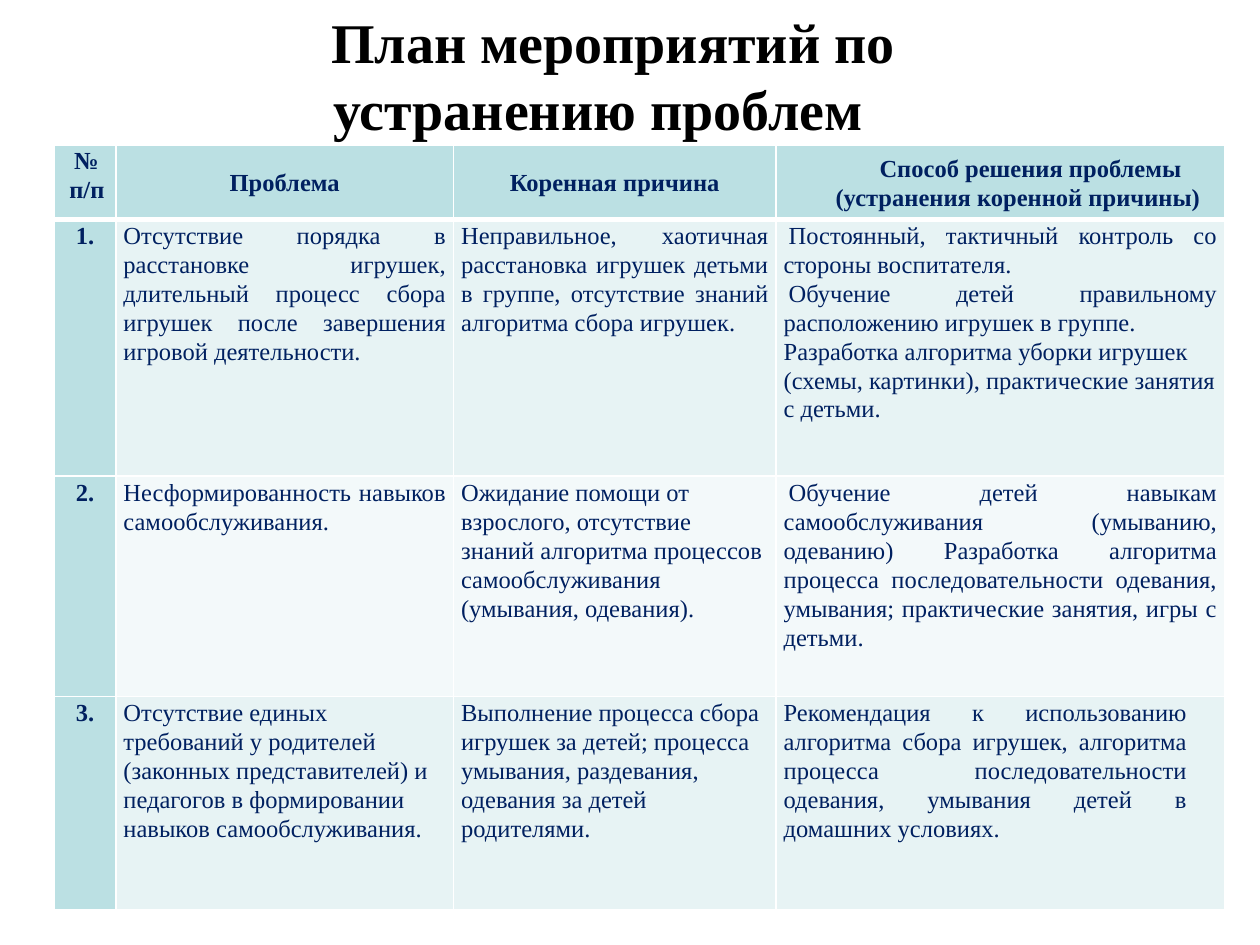
from lxml import etree
from pptx import Presentation
from pptx.dml.color import RGBColor
from pptx.enum.text import MSO_ANCHOR, PP_ALIGN
from pptx.oxml.ns import qn
from pptx.util import Inches, Pt

LEFT, CENTER, JUSTIFY = PP_ALIGN.LEFT, PP_ALIGN.CENTER, PP_ALIGN.JUSTIFY
TOP, MIDDLE = MSO_ANCHOR.TOP, MSO_ANCHOR.MIDDLE

THEME = dict(font="Times New Roman", title_lead="TeX Gyre Adventor",
             title="000000", text="002060", head="BBE0E3",
             bands=("E7F3F4", "F3F9FA"), border="FFFFFF",
             title_size=32, text_size=14)

# Content: each cell is a list of (text, paragraph format)
TITLE = "План мероприятий по\vустранению проблем "
HEADER = [
    [("№ ", dict(margin=0.07)), ("п/п", dict(margin=0.03))],
    [("Проблема", {})],
    [("Коренная причина", {})],
    [("Способ решения проблемы (устранения коренной причины)",
      dict(margin=0.28, indent=0.2))],
]
J = dict(align=JUSTIFY)
J_INDENT = dict(align=JUSTIFY, indent=0.04)
J_NARROW = dict(align=JUSTIFY, right=0.24)
L = dict(align=LEFT)
ROWS = [
    [[("Отсутствие порядка в расстановке игрушек, длительный процесс сбора "
       "игрушек после завершения игровой деятельности.", J)],
     [("Неправильное, хаотичная расстановка игрушек детьми в группе, "
       "отсутствие знаний алгоритма сбора игрушек.", J)],
     [("Постоянный, тактичный контроль со стороны воспитателя. ", J_INDENT),
      ("Обучение детей правильному расположению игрушек в группе.", J_INDENT),
      ("Разработка алгоритма уборки игрушек (схемы, картинки), "
       "практические занятия с детьми. ", L)]],
    [[("Несформированность навыков самообслуживания.", J)],
     [("Ожидание помощи от взрослого, отсутствие знаний алгоритма процессов "
       "самообслуживания (умывания, одевания).", L)],
     [("Обучение детей навыкам самообслуживания (умыванию, одеванию) "
       "Разработка алгоритма процесса последовательности одевания, умывания; "
       "практические занятия, игры с детьми. ", J_INDENT)]],
    [[("Отсутствие единых требований у родителей (законных представителей) и "
       "педагогов в формировании навыков самообслуживания.", L)],
     [("Выполнение процесса сбора игрушек за детей; процесса умывания, "
       "раздевания, одевания за детей родителями.", L)],
     [("Рекомендация к использованию алгоритма сбора игрушек, алгоритма "
       "процесса последовательности одевания, умывания детей в домашних "
       "условиях.", J_NARROW)]],
]
COL_WIDTHS = [0.49, 2.68, 2.56, 3.56]
ROW_HEIGHTS = [0.59, 2.04, 1.75, 1.69]


def rgb(name):
    return RGBColor.from_string(name)


def add_text(p, text, size=THEME["text_size"], color=THEME["text"],
             font=THEME["font"], bold=False, align=CENTER, spacing=None,
             margin=0, indent=0, right=0):
    p.alignment = align
    if spacing:
        p.line_spacing = spacing
    pPr = p._p.get_or_add_pPr()
    for key, value in (("marL", margin), ("marR", right), ("indent", indent)):
        if value:
            pPr.set(key, str(Inches(value)))
    p.font.size = Pt(size)
    for i, part in enumerate(text.split("\v")):
        if i:
            p.add_line_break()
        r = p.add_run()
        r.text = part
        r.font.name, r.font.size, r.font.bold = font, Pt(size), bold
        r.font.color.rgb = rgb(color)


def set_borders(cell, top, bottom):
    tcPr = cell._tc.get_or_add_tcPr()
    for side, width in (("L", 1), ("R", 1), ("T", top), ("B", bottom)):
        ln = etree.SubElement(tcPr, qn(f"a:ln{side}"), w=str(Pt(width)))
        fill = etree.SubElement(ln, qn("a:solidFill"))
        etree.SubElement(fill, qn("a:srgbClr"), val=THEME["border"])


def fill_cell(cell, paragraphs, fill, bold, anchor, top, bottom):
    set_borders(cell, top, bottom)
    cell.fill.solid()
    cell.fill.fore_color.rgb = rgb(fill)
    cell.margin_left = cell.margin_right = Inches(0.06)
    cell.margin_top, cell.margin_bottom = Inches(0.01), 0
    cell.vertical_anchor = anchor
    tf = cell.text_frame
    for i, (text, fmt) in enumerate(paragraphs):
        p = tf.add_paragraph() if i else tf.paragraphs[0]
        add_text(p, text, bold=bold, spacing=1.07, **fmt)


prs = Presentation()
prs.slide_width, prs.slide_height = Inches(10), Inches(7.5)
s = prs.slides.add_slide(prs.slide_layouts[6])

# Title
sp = s.shapes.add_textbox(Inches(2.38), 0, Inches(4.85), Inches(1.18))
tf = sp.text_frame
tf.word_wrap = False
tf.vertical_anchor = MIDDLE
p = tf.paragraphs[0]
title_format = dict(size=THEME["title_size"], color=THEME["title"])
add_text(p, " ", font=THEME["title_lead"], **title_format)
add_text(p, TITLE, bold=True, **title_format)

# Table grid
table = s.shapes.add_table(
    len(ROW_HEIGHTS), len(COL_WIDTHS), Inches(0.43), Inches(1.15),
    Inches(sum(COL_WIDTHS)), Inches(sum(ROW_HEIGHTS))).table
table.horz_banding = False
for col, width in zip(table.columns, COL_WIDTHS):
    col.width = Inches(width)
for row, height in zip(table.rows, ROW_HEIGHTS):
    row.height = Inches(height)

# Header row
for c, paragraphs in enumerate(HEADER):
    fill_cell(table.cell(0, c), paragraphs, THEME["head"], True,
              MIDDLE if c else TOP, 1, 3)

# Numbered body rows
for n, cells in enumerate(ROWS, 1):
    band = THEME["bands"][(n - 1) % 2]
    for c, paragraphs in enumerate([[(f"{n}.", {})]] + cells):
        fill_cell(table.cell(n, c), paragraphs, band if c else THEME["head"],
                  c == 0, TOP, 3 if n == 1 else 1, 1)

prs.save("out.pptx")
